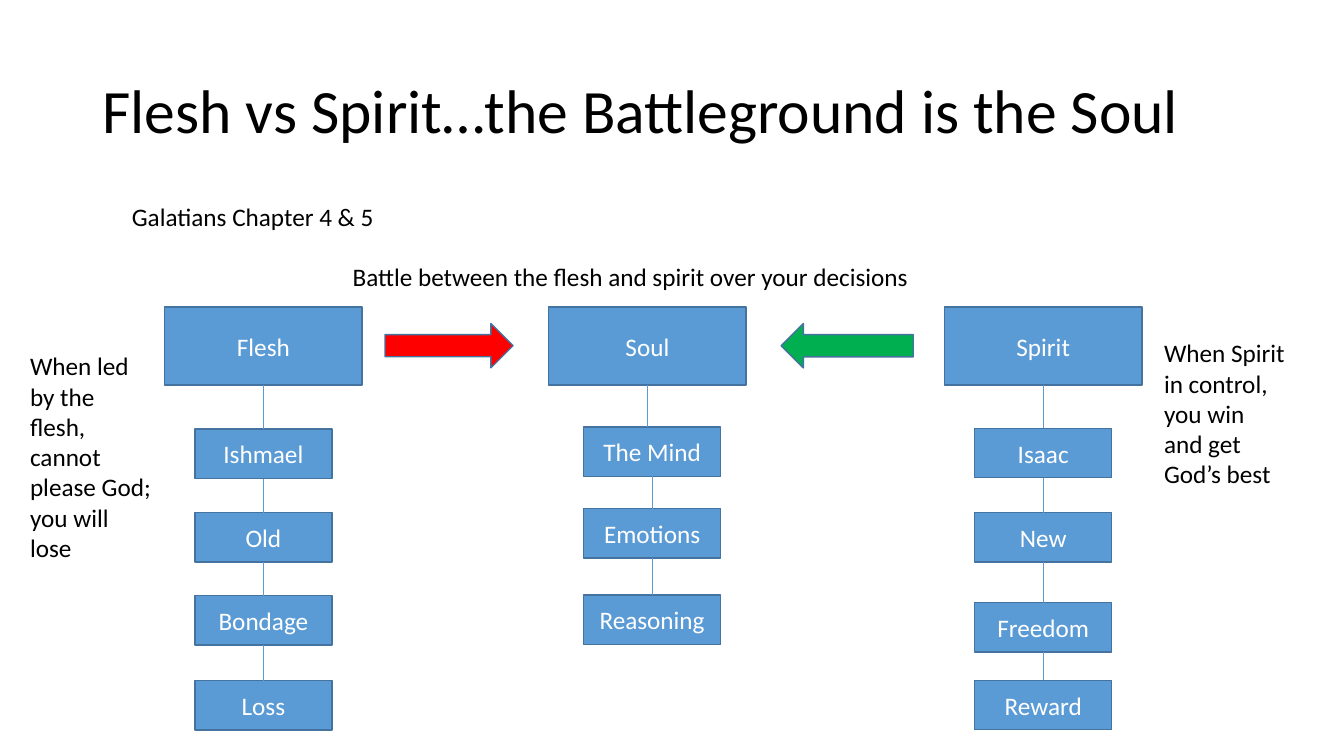
from dataclasses import dataclass
from itertools import pairwise
from typing import Any

import pptx
import pptx.dml.color
import pptx.enum.shapes
import pptx.enum.text
import pptx.oxml.ns
import pptx.util
from lxml import etree

Align = pptx.enum.text.PP_ALIGN
Anchor = pptx.enum.text.MSO_ANCHOR
AutoSize = pptx.enum.text.MSO_AUTO_SIZE
Preset = pptx.enum.shapes.MSO_SHAPE

SLIDE_WIDTH = pptx.util.Inches(13.333)
SLIDE_HEIGHT = pptx.util.Inches(7.5)
COLUMNS, ROWS = 40, 30


@dataclass(frozen=True)
class Theme:
    font: str = "Calibri"
    title_size: float = 44
    text_size: float = 18
    box_line: float = 1
    link_line: float = 0.5
    dark: str = "000000"
    light: str = "FFFFFF"
    box: str = "5B9BD5"
    outline: str = "43739E"
    flesh: str = "FF0000"
    spirit: str = "00B050"


@dataclass(frozen=True)
class Area:
    """A place on the grid, in columns and rows."""
    left: float
    top: float
    width: float
    height: float

    @property
    def middle(self) -> float:
        return self.left + self.width / 2

    @property
    def bottom(self) -> float:
        return self.top + self.height

    def lengths(self) -> tuple[int, int, int, int]:
        return (across(self.left), down(self.top),
                across(self.width), down(self.height))


@dataclass(frozen=True)
class Step:
    name: str
    top: float


@dataclass(frozen=True)
class Pillar:
    name: str
    middle: float
    steps_middle: float
    steps: tuple[Step, ...]


@dataclass(frozen=True)
class Arrow:
    area: Area
    color: str
    rotation: float


@dataclass(frozen=True)
class Note:
    text: str
    area: Area
    wrap: bool


THEME = Theme()
TITLE = "Flesh vs Spirit…the Battleground is the Soul"
TITLE_AREA = Area(2.75, 1.6, 34.5, 5.8)
HEAD_TOP, HEAD_WIDTH, HEAD_HEIGHT = 12.18, 5.88, 3.1
STEP_WIDTH, STEP_HEIGHT = 4.08, 1.96

PILLARS = (
    Pillar("Flesh", 7.84, 7.84, (
        Step("Ishmael", 17.03), Step("Old", 20.34),
        Step("Bondage", 23.64), Step("Loss", 27.01))),
    Pillar("Soul", 19.27, 19.41, (
        Step("The Mind", 16.95), Step("Emotions", 20.18),
        Step("Reasoning", 23.61))),
    Pillar("Spirit", 31.05, 31.05, (
        Step("Isaac", 17), Step("New", 20.34),
        Step("Freedom", 23.92), Step("Reward", 27))),
)
ARROWS = (
    Arrow(Area(11.46, 12.84, 3.81, 1.76), THEME.flesh, 0),
    Arrow(Area(23.25, 12.84, 3.93, 1.76), THEME.spirit, 180),
)
NOTES = (
    Note("Galatians Chapter 4 & 5", Area(3.63, 7.8, 7.89, 1.6), False),
    Note("Battle between the flesh and spirit over your decisions",
         Area(10.2, 10.16, 17.37, 1.6), False),
    Note("When Spirit in control, you win and get God’s best",
         Area(34.35, 13.2, 4.26, 6.44), True),
    Note("When led by the flesh, cannot please God; you will lose",
         Area(0.6, 13.72, 4.32, 8.88), True),
)


def across(columns: float) -> int:
    return round(SLIDE_WIDTH * columns / COLUMNS)


def down(rows: float) -> int:
    return round(SLIDE_HEIGHT * rows / ROWS)


def rgb(color: str) -> pptx.dml.color.RGBColor:
    return pptx.dml.color.RGBColor.from_string(color)


def apply(target: Any, values: dict[str, Any]) -> None:
    for name, value in values.items():
        setattr(target, name, value)


def write(shape: Any, text: str, size: float, color: str,
          frame_format: dict[str, Any], paragraph_format: dict[str, Any]) -> None:
    frame = shape.text_frame
    frame.text = text
    apply(frame, frame_format)
    paragraph = frame.paragraphs[0]
    apply(paragraph, paragraph_format)
    apply(paragraph.font, {"name": THEME.font, "size": pptx.util.Pt(size)})
    paragraph.font.color.rgb = rgb(color)


def add_filled(slide: Any, preset: Any, area: Area, color: str) -> Any:
    shape = slide.shapes.add_shape(preset, *area.lengths())
    shape.shadow.inherit = False
    shape.fill.solid()
    shape.fill.fore_color.rgb = rgb(color)
    shape.line.color.rgb = rgb(THEME.outline)
    shape.line.width = pptx.util.Pt(THEME.box_line)
    return shape


def add_box(slide: Any, name: str, area: Area) -> None:
    shape = add_filled(slide, Preset.RECTANGLE, area, THEME.box)
    write(shape, name, THEME.text_size, THEME.light,
          {"vertical_anchor": Anchor.MIDDLE, "word_wrap": True},
          {"alignment": Align.CENTER})


def add_link(slide: Any, upper: Area, lower: Area) -> None:
    x = across(upper.middle)
    link = slide.shapes.add_connector(
        pptx.enum.shapes.MSO_CONNECTOR.STRAIGHT,
        x, down(upper.bottom), x, down(lower.top))
    link.line.color.rgb = rgb(THEME.box)
    link.line.width = pptx.util.Pt(THEME.link_line)
    etree.SubElement(link._element.spPr, pptx.oxml.ns.qn("a:effectLst"))


def add_pillar(slide: Any, pillar: Pillar) -> None:
    """Draw a heading box with its chain of steps below."""
    head = Area(pillar.middle - HEAD_WIDTH / 2, HEAD_TOP, HEAD_WIDTH, HEAD_HEIGHT)
    step_left = pillar.steps_middle - STEP_WIDTH / 2
    areas = [head] + [Area(step_left, step.top, STEP_WIDTH, STEP_HEIGHT)
                      for step in pillar.steps]
    names = [pillar.name] + [step.name for step in pillar.steps]
    for name, area in zip(names, areas):
        add_box(slide, name, area)
    for upper, lower in pairwise(areas):
        add_link(slide, upper, lower)


def add_arrow(slide: Any, arrow: Arrow) -> None:
    shape = add_filled(slide, Preset.RIGHT_ARROW, arrow.area, arrow.color)
    shape.rotation = arrow.rotation


def add_note(slide: Any, note: Note) -> None:
    shape = slide.shapes.add_textbox(*note.area.lengths())
    write(shape, note.text, THEME.text_size, THEME.dark,
          {"word_wrap": note.wrap, "auto_size": AutoSize.SHAPE_TO_FIT_TEXT},
          {"alignment": Align.LEFT})


def place_title(slide: Any) -> None:
    title = slide.shapes.title
    apply(title, dict(zip(("left", "top", "width", "height"), TITLE_AREA.lengths())))
    write(title, TITLE, THEME.title_size, THEME.dark,
          {"vertical_anchor": Anchor.MIDDLE, "auto_size": AutoSize.NONE},
          {"alignment": Align.LEFT, "line_spacing": 0.9})


def main() -> None:
    presentation = pptx.Presentation()
    apply(presentation, {"slide_width": SLIDE_WIDTH, "slide_height": SLIDE_HEIGHT})
    slide = presentation.slides.add_slide(
        presentation.slide_layouts.get_by_name("Title Only"))
    place_title(slide)
    for draw, items in ((add_pillar, PILLARS), (add_arrow, ARROWS), (add_note, NOTES)):
        for item in items:
            draw(slide, item)
    presentation.save("out.pptx")


if __name__ == "__main__":
    main()
